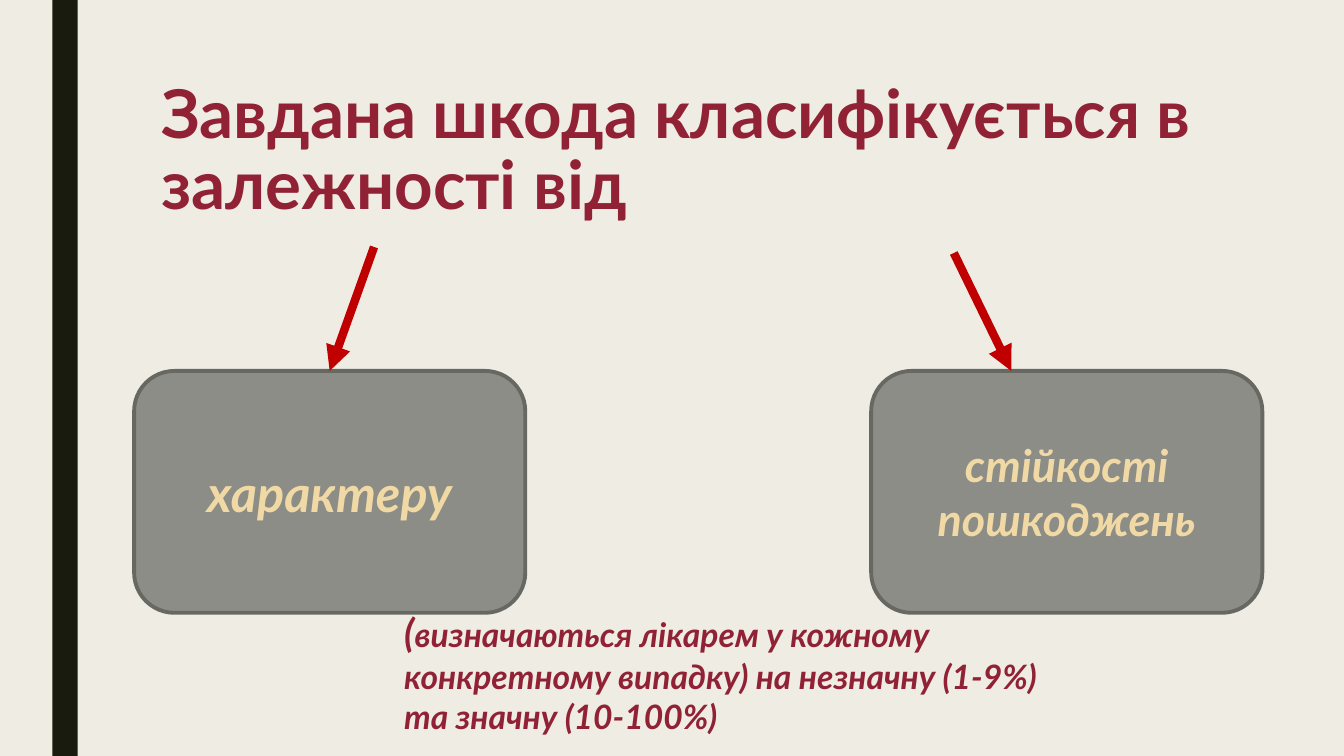
from pptx import Presentation
from pptx.dml.color import RGBColor
from pptx.enum.shapes import MSO_CONNECTOR, MSO_SHAPE
from pptx.enum.text import MSO_ANCHOR, PP_ALIGN
from pptx.oxml.ns import qn
from pptx.util import Pt
from lxml.etree import SubElement

PX = 9144  # EMU per px, 100 px to the inch
FONT = "Lato"
HUES = {
    "back": "EFEDE3", "bar": "191B0E", "wine": "912236", "red": "C00000",
    "box": "8C8D86", "edge": "686863", "sand": "F0D9A5",
}


def hue(name):
    return RGBColor.from_string(HUES[name])


class Deck:
    def __init__(self, width, height):
        self.file = Presentation()
        self.file.slide_width = width * PX
        self.file.slide_height = height * PX
        self.slide = self.file.slides.add_slide(self.file.slide_layouts[5])
        fill = self.slide.background.fill
        fill.solid()
        fill.fore_color.rgb = hue("back")

    def text(self, para, words, size, color, italic=True):
        run = para.add_run()
        run.text = words
        font = run.font
        font.name, font.size = FONT, Pt(size)
        font.bold, font.italic = True, italic
        font.color.rgb = hue(color)

    def shape(self, kind, place, fill, edge=None):
        item = self.slide.shapes.add_shape(kind, *(n * PX for n in place))
        item.shadow.inherit = False
        item.fill.solid()
        item.fill.fore_color.rgb = hue(fill)
        if edge:
            item.line.color.rgb = hue(edge)
            item.line.width = Pt(2.75)
        else:
            item.line.fill.background()
        return item

    def title(self, place, words):
        item = self.slide.shapes.title
        item.left, item.top, item.width, item.height = (n * PX for n in place)
        frame = item.text_frame
        frame.word_wrap = True
        frame.vertical_anchor = MSO_ANCHOR.TOP
        para = frame.paragraphs[0]
        para.alignment = PP_ALIGN.LEFT
        para.line_spacing = 0.89
        self.text(para, words, 48, "wine", False)

    def box(self, place, words, size):
        kind = MSO_SHAPE.FLOWCHART_ALTERNATE_PROCESS
        item = self.shape(kind, place, "box", "edge")
        frame = item.text_frame
        frame.word_wrap = True
        frame.vertical_anchor = MSO_ANCHOR.MIDDLE
        para = frame.paragraphs[0]
        para.alignment = PP_ALIGN.CENTER
        self.text(para, words, size, "sand")
        return item

    def arrow(self, start, end):
        ends = (n * PX for n in start + end)
        item = self.slide.shapes.add_connector(MSO_CONNECTOR.STRAIGHT, *ends)
        item.line.color.rgb = hue("red")
        item.line.width = Pt(6)
        props = item.element.spPr
        SubElement(props.find(qn("a:ln")), qn("a:tailEnd"), type="triangle")
        SubElement(props, qn("a:effectLst"))
        return item

    def note(self, place, parts):
        item = self.slide.shapes.add_textbox(*(n * PX for n in place))
        frame = item.text_frame
        frame.word_wrap = True
        for words, size in parts:
            self.text(frame.paragraphs[0], words, size, "wine")


def main():
    deck = Deck(1333, 750)

    # Side bar and title
    deck.shape(MSO_SHAPE.RECTANGLE, (52, 0, 25, 750), "bar")
    deck.title((150, 75, 1050, 162),
               "Завдана шкода класифікується в залежності від")

    # Two criteria with their arrows
    top, width, height = 368, 388, 240
    nature = deck.box((133, top, width, height), "характеру", 36)
    deck.box((864, top, width, height), "стійкості пошкоджень", 32)
    left = deck.arrow((371, 245), (327, top))
    left.end_connect(nature, 0)
    deck.arrow((946, 251), (1003, top))

    # Note on the degree of damage
    deck.note((391, 599, 667, 138), [
        ("(", 28),
        ("визначаються лікарем у кожному конкретному випадку) "
         "на незначну (1-9%) та значну (10-100%)", 24),
    ])

    deck.file.save("out.pptx")


if __name__ == "__main__":
    main()
